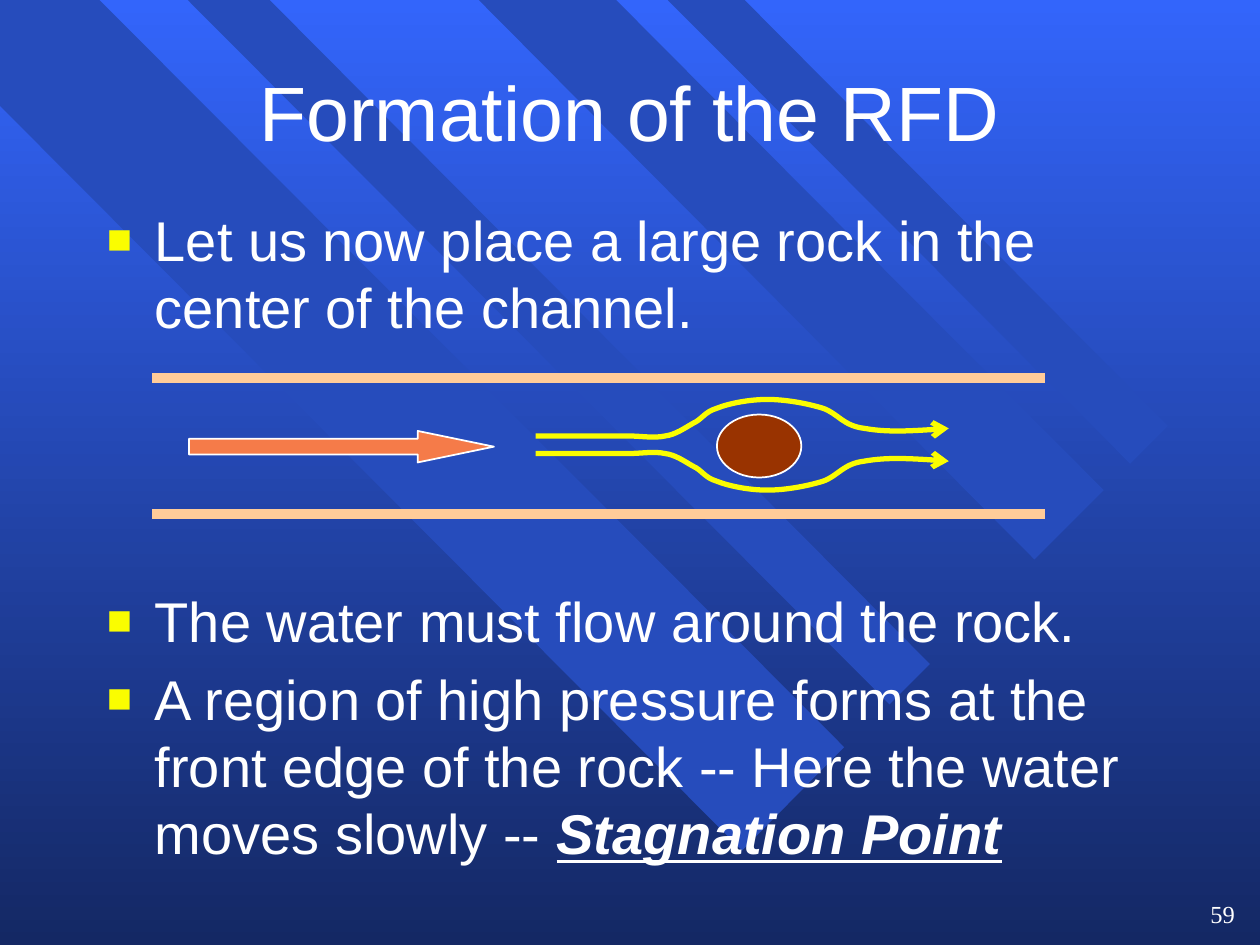
from lxml.etree import SubElement
from pptx import Presentation
from pptx.dml.color import RGBColor
from pptx.enum.shapes import MSO_CONNECTOR, MSO_SHAPE
from pptx.enum.text import MSO_ANCHOR, PP_ALIGN
from pptx.oxml.ns import qn
from pptx.util import Inches, Pt

COLORS = {
    "sky": "3365FB", "deep": "142864", "band": "264CBC", "text": "FFFFFF",
    "flow": "FAFD00", "bank": "FFCC99", "arrow": "F57B49", "rock": "993300",
}


class SlideBuilder:
    font = "Arial"

    def __init__(self, slide):
        self.slide = slide
        self.shapes = slide.shapes

    def color(self, name):
        return RGBColor.from_string(COLORS[name])

    def background(self, top, bottom):
        fill = self.slide.background.fill
        fill.gradient()
        fill.gradient_angle = 270
        for stop, name, position in zip(fill.gradient_stops, (top, bottom), (0, 1)):
            stop.color.rgb = self.color(name)
            stop.position = position

    def paint(self, shape, fill=None, line=None, width=1):
        shape.shadow.inherit = False
        if fill:
            shape.fill.solid()
            shape.fill.fore_color.rgb = self.color(fill)
        else:
            shape.fill.background()
        if line:
            shape.line.color.rgb = self.color(line)
            shape.line.width = Pt(width)
        else:
            shape.line.fill.background()

    def outline(self, points, close):
        start, *others = [(Inches(x), Inches(y)) for x, y in points]
        builder = self.shapes.build_freeform(*start)
        builder.add_line_segments(others, close=close)
        return builder.convert_to_shape()

    def band(self, points):
        self.paint(self.outline(points, True), "band")

    def streamline(self, points):
        """Draw a Bezier curve: a start, then three points per segment."""
        shape = self.outline(points, False)
        self.paint(shape, line="flow", width=3)
        path = next(shape._element.iter(qn("a:path")))
        segments = path.findall(qn("a:lnTo"))
        for start in range(0, len(segments), 3):
            curve = SubElement(path, qn("a:cubicBezTo"))
            for segment in segments[start:start + 3]:
                curve.append(segment[0])
                path.remove(segment)
        SubElement(shape.line._get_or_add_ln(), qn("a:tailEnd"), type="arrow")

    def preset(self, kind, box, fill):
        shape = self.shapes.add_shape(kind, *map(Inches, box))
        self.paint(shape, fill, "text")
        return shape

    def bank(self, left, right, y):
        line = self.shapes.add_connector(
            MSO_CONNECTOR.STRAIGHT, Inches(left), Inches(y), Inches(right), Inches(y))
        line.line.color.rgb = self.color("bank")
        line.line.width = Pt(6)
        line.line._get_or_add_ln().set("cap", "sq")
        SubElement(line._element.spPr, qn("a:effectLst"))

    def text_frame(self, box, anchor=MSO_ANCHOR.MIDDLE, wrap=True):
        frame = self.shapes.add_textbox(*map(Inches, box)).text_frame
        frame.word_wrap = wrap
        frame.vertical_anchor = anchor
        return frame

    def run(self, paragraph, text, size, font=None):
        run = paragraph.add_run()
        run.text = text
        run.font.size = Pt(size)
        run.font.name = font or self.font
        run.font.color.rgb = self.color("text")
        return run

    def label(self, box, text, size, align, font=None, wrap=True):
        paragraph = self.text_frame(box, wrap=wrap).paragraphs[0]
        paragraph.alignment = align
        self.run(paragraph, text, size, font)

    def bullets(self, box, items, size):
        frame = self.text_frame(box, MSO_ANCHOR.TOP)
        for index, (space_before, text, emphasis) in enumerate(items):
            paragraph = frame.add_paragraph() if index else frame.paragraphs[0]
            paragraph.line_spacing = Pt(1.2 * size)
            paragraph.space_before = Pt(space_before)
            properties = paragraph._p.get_or_add_pPr()
            properties.set("marL", str(Inches(0.38)))
            properties.set("indent", str(Inches(-0.38)))
            bullet_color = SubElement(properties, qn("a:buClr"))
            SubElement(bullet_color, qn("a:srgbClr"), val=COLORS["flow"])
            SubElement(properties, qn("a:buSzPct"), val="75000")
            SubElement(properties, qn("a:buFont"), typeface=self.font)
            SubElement(properties, qn("a:buChar"), char="■")
            self.run(paragraph, text, size)
            if emphasis:
                font = self.run(paragraph, emphasis, size).font
                font.bold = font.italic = font.underline = True


def main():
    presentation = Presentation()
    presentation.slide_width, presentation.slide_height = Inches(10), Inches(7.5)
    builder = SlideBuilder(presentation.slides.add_slide(presentation.slide_layouts[6]))

    # Background with diagonal bands
    builder.background("sky", "deep")
    for points in (
        [(6.7, 5.93), (0.79, 0), (0, 0), (0, 0.84), (5.89, 6.75)],
        [(2.14, 0), (7.38, 5.27), (7.06, 5.59), (1.49, 0)],
        [(4.89, 0), (8.76, 3.89), (8.21, 4.44), (3.8, 0)],
        [(5.3, 0), (8.97, 3.68), (9.27, 3.38), (5.91, 0)],
    ):
        builder.band(points)

    # Page number, title and bullets; the wide gap leaves room for the channel
    builder.label((9.47, 7.09, 0.43, 0.33), "59", 14, PP_ALIGN.RIGHT,
                  "Times New Roman", wrap=False)
    builder.label((0.75, 0.25, 8.5, 1.25), "Formation of the RFD", 44, PP_ALIGN.CENTER)
    builder.bullets((0.75, 1.58, 8.5, 5.58), [
        (0, "Let us now place a large rock in the center of the channel.", None),
        (140.8, "The water must flow around the rock.", None),
        (6.4, "A region of high pressure forms at the front edge of the rock -- "
              "Here the water moves slowly -- ", "Stagnation Point"),
    ], 32)

    # Channel banks, current arrow and rock
    for y in (3, 4.08):
        builder.bank(1.25, 8.25, y)
    current = builder.preset(MSO_SHAPE.RIGHT_ARROW, (1.5, 3.42, 2.42, 0.25), "arrow")
    current.adjustments[0] = 0.5
    current.adjustments[1] = 2.42
    builder.preset(MSO_SHAPE.OVAL, (5.69, 3.29, 0.67, 0.5), "rock")

    # Streamlines, mirrored about the channel axis
    axis = 3.53
    upper = [
        (4.25, 3.46), (4.31, 3.46), (4.48, 3.46), (4.6, 3.46),
        (4.72, 3.46), (4.87, 3.46), (4.98, 3.46),
        (5.09, 3.46), (5.19, 3.48), (5.28, 3.46),
        (5.36, 3.45), (5.43, 3.4), (5.5, 3.36),
        (5.57, 3.33), (5.59, 3.27), (5.69, 3.24),
        (5.79, 3.2), (5.95, 3.17), (6.09, 3.17),
        (6.23, 3.17), (6.4, 3.2), (6.53, 3.24),
        (6.65, 3.28), (6.69, 3.38), (6.86, 3.4),
        (7.03, 3.43), (7.28, 3.42), (7.53, 3.4),
    ]
    builder.streamline(upper)
    builder.streamline([(x, 2 * axis - y) for x, y in upper])

    presentation.save("out.pptx")


if __name__ == "__main__":
    main()
